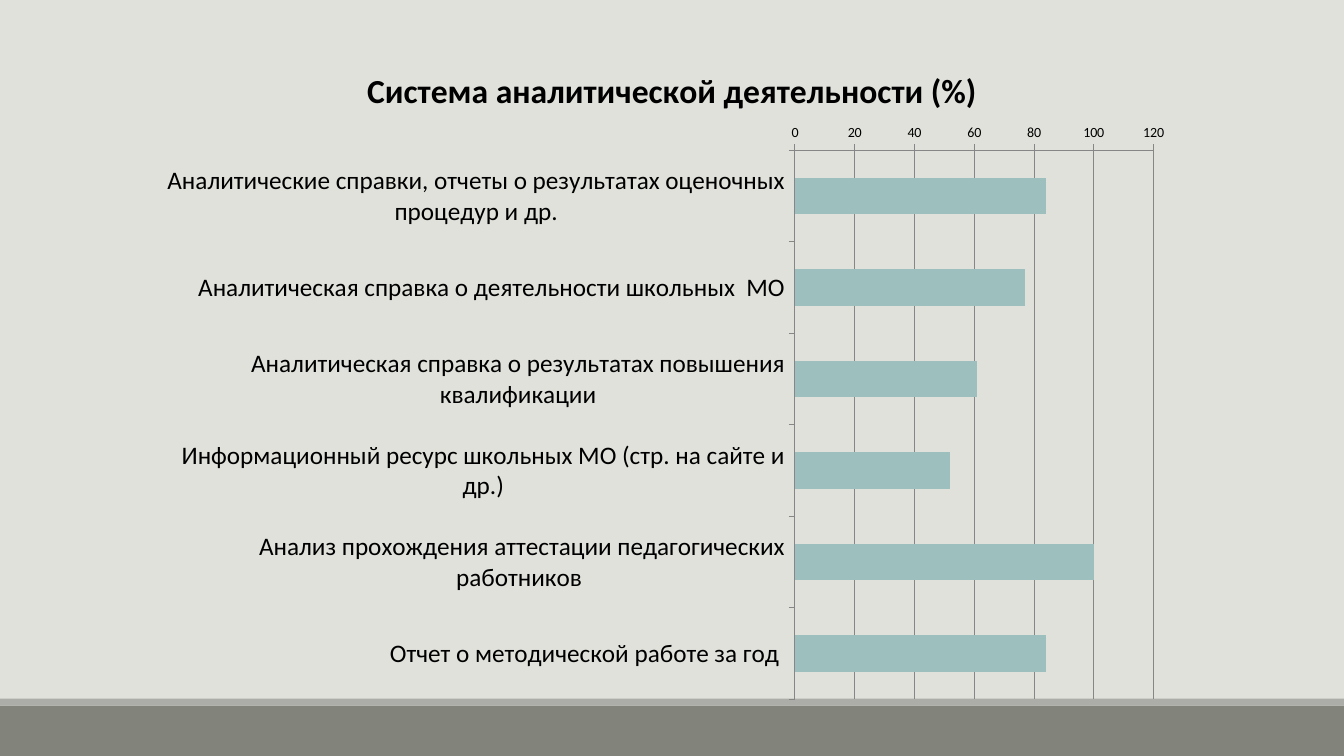
from lxml import etree
from pptx import Presentation
from pptx.chart.data import CategoryChartData
from pptx.dml.color import RGBColor
from pptx.enum.chart import XL_CHART_TYPE, XL_TICK_MARK
from pptx.enum.shapes import MSO_SHAPE
from pptx.oxml.ns import qn
from pptx.util import Pt

BAR_CLUSTERED = XL_CHART_TYPE.BAR_CLUSTERED
TICK_OUTSIDE, TICK_NONE = XL_TICK_MARK.OUTSIDE, XL_TICK_MARK.NONE
RECTANGLE = MSO_SHAPE.RECTANGLE

THEME = {
    "font": "Calibri",
    "background": RGBColor.from_string("E1E1DB"),
    "floor": RGBColor.from_string("82847C"),
    "edge": RGBColor.from_string("ACADA8"),
    "bars": RGBColor.from_string("9DBFBE"),
    "rules": RGBColor.from_string("868686"),
    "text": RGBColor.from_string("000000"),
    "title_size": 24,
    "category_size": 18,
    "scale_size": 10,
}


def format_font(font, size, bold=False):
    settings = {"name": THEME["font"], "size": Pt(size), "bold": bold}
    for attribute, value in settings.items():
        setattr(font, attribute, value)
    font.color.rgb = THEME["text"]


def format_rule(line):
    line.color.rgb = THEME["rules"]
    line.width = Pt(0.75)


deck = Presentation()
deck.slide_width, deck.slide_height = Pt(960), Pt(540)
slide = deck.slides.add_slide(deck.slide_layouts[6])
slide.background.fill.solid()
slide.background.fill.fore_color.rgb = THEME["background"]

for color, top, height in (("floor", 504, 36), ("edge", 499, 5)):
    band = slide.shapes.add_shape(RECTANGLE, Pt(0), Pt(top), Pt(960), Pt(height))
    band.shadow.inherit = False
    band.fill.solid()
    band.fill.fore_color.rgb = THEME[color]
    band.line.fill.background()

analytics = {
    "Аналитические справки, отчеты о результатах оценочных процедур и др.": 84,
    "Аналитическая справка о деятельности школьных  МО": 77,
    "Аналитическая справка о результатах повышения квалификации": 61,
    "Информационный ресурс школьных МО (стр. на сайте и др.)": 52,
    "Анализ прохождения аттестации педагогических работников ": 100,
    "Отчет о методической работе за год ": 84,
}
chart_data = CategoryChartData(number_format="0")
chart_data.categories = list(analytics)
chart_data.add_series("Series 1", list(analytics.values()))
chart = slide.shapes.add_chart(
    BAR_CLUSTERED, Pt(114), Pt(31), Pt(732), Pt(478), chart_data
).chart
format_font(chart.font, THEME["scale_size"])
chart.has_legend = False

heading = chart.chart_title.text_frame
heading.text = "Система аналитической деятельности (%)"
format_font(heading.paragraphs[0].runs[0].font, THEME["title_size"], bold=True)
chart.chart_title.include_in_layout = False

bars = chart.plots[0]
bars.gap_width = 150
bars.vary_by_categories = False
bars.series[0].format.fill.solid()
bars.series[0].format.fill.fore_color.rgb = THEME["bars"]

categories, scale = chart.category_axis, chart.value_axis
axis_settings = (
    (categories, THEME["category_size"], {"reverse_order": True, "has_major_gridlines": False}),
    (scale, THEME["scale_size"], {"minimum_scale": 0, "maximum_scale": 120,
                                  "major_unit": 20, "has_major_gridlines": True}),
)
for axis, size, settings in axis_settings:
    settings |= {"major_tick_mark": TICK_OUTSIDE, "minor_tick_mark": TICK_NONE}
    for attribute, value in settings.items():
        setattr(axis, attribute, value)
    format_font(axis.tick_labels.font, size)
    format_rule(axis.format.line)
format_rule(scale.major_gridlines.format.line)
scale.tick_labels.number_format = "0"
scale.tick_labels.number_format_is_linked = False

plot_area = chart.element.find(".//" + qn("c:plotArea"))
for default_layout in plot_area.findall(qn("c:layout")):
    plot_area.remove(default_layout)
layout = etree.Element(qn("c:layout"))
plot_area.insert(0, layout)
manual = etree.SubElement(layout, qn("c:manualLayout"))
placement = {"layoutTarget": "inner", "xMode": "edge", "yMode": "edge",
             "x": 0.62, "y": 0.16, "w": 0.35, "h": 0.82}
for tag, value in placement.items():
    etree.SubElement(manual, qn("c:" + tag)).set("val", str(value))

deck.save("out.pptx")
